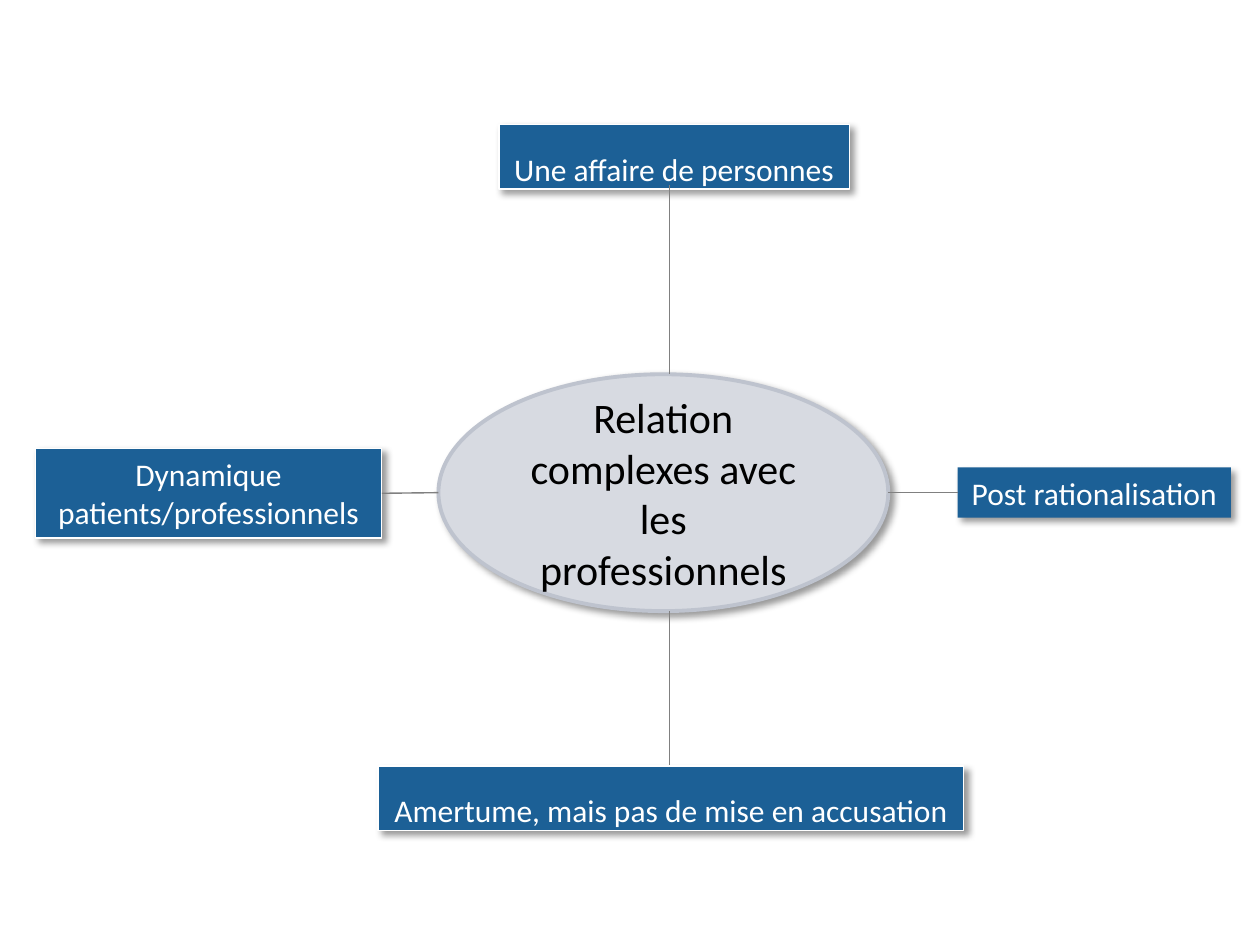
from dataclasses import dataclass
from typing import Optional

from lxml.etree import SubElement
from pptx import Presentation
from pptx.dml.color import RGBColor
from pptx.enum.shapes import MSO_CONNECTOR as Link, MSO_SHAPE as Preset
from pptx.enum.text import MSO_ANCHOR as Anchor, MSO_AUTO_SIZE as Fit, PP_ALIGN as Align
from pptx.oxml.ns import qn
from pptx.util import Inches, Pt

COLUMNS, ROWS = 100, 75
TOP, LEFT, BOTTOM, RIGHT = range(4)


@dataclass(frozen=True)
class Theme:
    font: str = "Calibri"
    theme_size: float = 18
    centre_size: float = 24
    blue: str = "1C6096"
    white: str = "FFFFFF"
    black: str = "000000"
    pale: str = "D7DAE1"
    rim: str = "BEC3CE"
    grey: str = "808080"
    box_line: float = 0.75
    rim_line: float = 2.22
    link_line: float = 0.79


@dataclass(frozen=True)
class Node:
    text: str
    column: float
    row: float
    columns: float
    rows: float
    outlined: bool = True
    wrap: bool = False
    spacing: Optional[float] = None


THEME = Theme()
CENTRE = Node("Relation complexes avec les professionnels", 34.8, 29.7, 35.7, 18.8, wrap=True)
POST = Node("Post rationalisation", 76, 37.1, 21.7, 4, outlined=False)
DYNAMIC = Node("Dynamique patients/professionnels", 2.8, 35.6, 27.5, 7.1, wrap=True)
BITTERNESS = Node("Amertume, mais pas de mise en accusation", 30, 60.8, 46.5, 5.1, spacing=1.5)
PEOPLE = Node("Une affaire de personnes", 39.6, 9.9, 27.8, 5.1, spacing=1.5)

deck = Presentation()
deck.slide_width, deck.slide_height = Inches(10), Inches(7.5)
slide = deck.slides.add_slide(deck.slide_layouts[6])


def across(columns: float) -> int:
    return round(deck.slide_width * columns / COLUMNS)


def down(rows: float) -> int:
    return round(deck.slide_height * rows / ROWS)


def rgb(value: str) -> RGBColor:
    return RGBColor.from_string(value)


def write(frame, text: str, *, size: float, color: str, wrap: bool,
          fit: Fit, anchor: Anchor, spacing: Optional[float]) -> None:
    frame.word_wrap, frame.auto_size, frame.vertical_anchor = wrap, fit, anchor
    paragraph = frame.paragraphs[0]
    paragraph.alignment, paragraph.line_spacing = Align.CENTER, spacing
    run = paragraph.add_run()
    run.text = text
    run.font.name, run.font.size = THEME.font, Pt(size)
    run.font.color.rgb = rgb(color)


def cast_shadow(shape) -> None:
    shape.shadow.inherit = False
    effects = shape._element.spPr.find(qn("a:effectLst"))
    shadow = SubElement(effects, qn("a:outerShdw"), blurRad=str(Pt(4)), dist=str(Pt(3)),
                        dir=str(45 * 60000), algn="tl", rotWithShape="0")
    tint = SubElement(shadow, qn("a:srgbClr"), val=THEME.black)
    SubElement(tint, qn("a:alpha"), val="40000")


def draw_node(node: Node, preset: Preset, fill: str, rim: str, width: float):
    shape = slide.shapes.add_shape(preset, across(node.column), down(node.row),
                                   across(node.columns), down(node.rows))
    shape.fill.solid()
    shape.fill.fore_color.rgb = rgb(fill)
    if node.outlined:
        shape.line.color.rgb = rgb(rim)
        shape.line.width = Pt(width)
    else:
        shape.line.fill.background()
    cast_shadow(shape)
    return shape


def draw_box(node: Node):
    box = draw_node(node, Preset.RECTANGLE, THEME.blue, THEME.white, THEME.box_line)
    write(box.text_frame, node.text, size=THEME.theme_size, color=THEME.white, wrap=node.wrap,
          fit=Fit.SHAPE_TO_FIT_TEXT, anchor=Anchor.TOP, spacing=node.spacing)
    return box


def draw_centre(node: Node) -> None:
    ellipse = draw_node(node, Preset.OVAL, THEME.pale, THEME.rim, THEME.rim_line)
    write(ellipse.text_frame, node.text, size=THEME.centre_size, color=THEME.black, wrap=node.wrap,
          fit=Fit.NONE, anchor=Anchor.MIDDLE, spacing=node.spacing)


def draw_link(start: tuple[float, float], end: tuple[float, float]):
    link = slide.shapes.add_connector(Link.STRAIGHT, across(start[0]), down(start[1]),
                                      across(end[0]), down(end[1]))
    link.line.color.rgb = rgb(THEME.grey)
    link.line.width = Pt(THEME.link_line)
    SubElement(link._element.spPr, qn("a:effectLst"))
    return link


def main() -> None:
    middle = CENTRE.row + CENTRE.rows / 2
    centre_right = CENTRE.column + CENTRE.columns
    centre_bottom = CENTRE.row + CENTRE.rows
    axis = 53.15

    post = draw_box(POST)
    draw_centre(CENTRE)
    dynamic = draw_box(DYNAMIC)
    draw_link((POST.column, middle), (centre_right, middle)).begin_connect(post, LEFT)
    draw_link((CENTRE.column, middle),
              (DYNAMIC.column + DYNAMIC.columns, middle)).end_connect(dynamic, RIGHT)
    draw_link((axis, centre_bottom), (axis, 63.5))
    draw_box(BITTERNESS)
    draw_box(PEOPLE)
    draw_link((axis, 14.7), (axis, CENTRE.row))
    deck.save("out.pptx")


if __name__ == "__main__":
    main()
